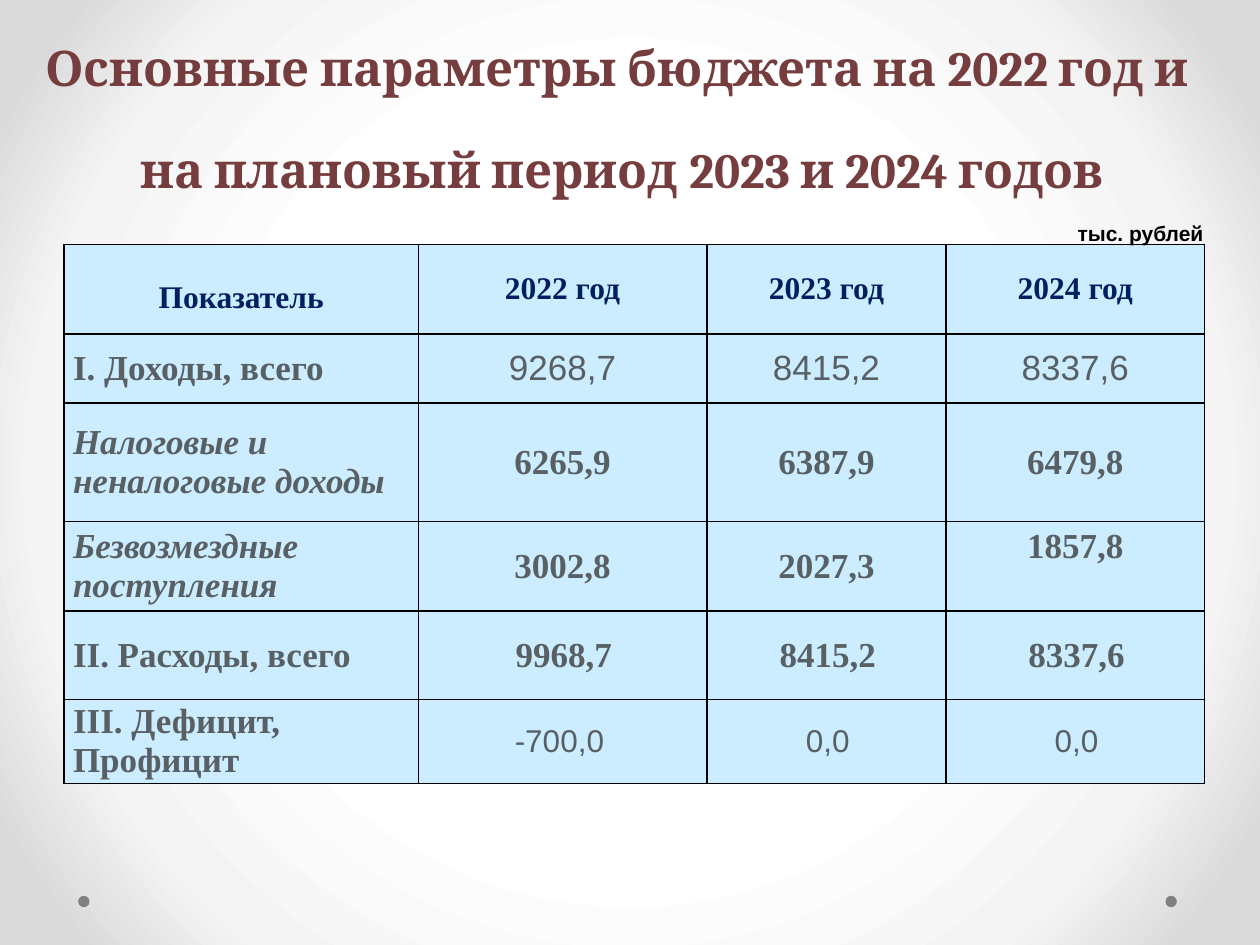
import pptx
import pptx.util
import pptx.dml.color
import pptx.enum.shapes
import pptx.enum.text
import pptx.oxml
import pptx.oxml.ns

Inches = pptx.util.Inches
Pt = pptx.util.Pt
ALIGN = pptx.enum.text.PP_ALIGN
ANCHOR = pptx.enum.text.MSO_ANCHOR

COLORS = {
    "title": "753D3D", "heading": "002060", "body": "586064", "unit": "000000",
    "cell": "CCECFF", "border": "000000", "dot": "808080",
}
BACKDROP = {50: "FFFFFF", 76: "F4F4F4", 92: "DADADA"}
SERIF, SANS = "Times New Roman", "Arial"

COLUMN_WIDTHS = [2.81, 2.29, 1.9, 2.05]
ROW_HEIGHTS = [0.71, 0.55, 0.94, 0.71, 0.7, 0.65]
HEADINGS = ["Показатель", "2022 год", "2023 год", "2024 год"]
# Label lines, label italic, values, value font, value size, first-line indent
BUDGET = [
    (["I. Доходы, всего"], False, ["9268,7", "8415,2", "8337,6"], SANS, 20, -0.07),
    (["Налоговые и неналоговые доходы"], True, ["6265,9", "6387,9", "6479,8"], SERIF, 20, -0.07),
    (["Безвозмездные поступления"], True, ["3002,8", "2027,3", "1857,8"], SERIF, 20, -0.07),
    (["II. Расходы, всего"], False, ["9968,7", "8415,2", "8337,6"], SERIF, 20, 0.02),
    (["III. Дефицит,", "Профицит"], False, ["-700,0 ", "0,0", "0,0"], SANS, 18, 0.02),
]


def rgb(name):
    return pptx.dml.color.RGBColor.from_string(COLORS[name])


def add_run(paragraph, text, font, size, color, bold=True, italic=False):
    run = paragraph.add_run()
    run.text = text
    run.font.name = font
    run.font.size = Pt(size)
    run.font.color.rgb = rgb(color)
    run.font.bold = bold
    run.font.italic = italic


def set_indent(paragraph, inches):
    properties = paragraph._p.get_or_add_pPr()
    properties.set("marL", "0")
    properties.set("indent", str(Inches(inches)))


def set_background(slide):
    stops = "".join(f'<a:gs pos="{position * 1000}"><a:srgbClr val="{color}"/></a:gs>'
                    for position, color in BACKDROP.items())
    slide._element.cSld.insert(0, pptx.oxml.parse_xml(
        f'<p:bg {pptx.oxml.ns.nsdecls("p", "a")}><p:bgPr><a:gradFill rotWithShape="1">'
        f'<a:gsLst>{stops}</a:gsLst><a:path path="circle">'
        '<a:fillToRect l="50000" t="50000" r="50000" b="50000"/></a:path>'
        '</a:gradFill><a:effectLst/></p:bgPr></p:bg>'))


def add_dot(slide, left):
    dot = slide.shapes.add_shape(pptx.enum.shapes.MSO_SHAPE.OVAL,
                                 Inches(left), Inches(7.11), Inches(0.09), Inches(0.09))
    dot.shadow.inherit = False
    dot.fill.solid()
    dot.fill.fore_color.rgb = rgb("dot")
    dot.line.fill.background()


def add_text_box(slide, left, top, width, height, align, anchor=ANCHOR.TOP):
    frame = slide.shapes.add_textbox(
        Inches(left), Inches(top), Inches(width), Inches(height)).text_frame
    frame.word_wrap = True
    frame.vertical_anchor = anchor
    paragraph = frame.paragraphs[0]
    paragraph.alignment = align
    return paragraph


def add_title(slide):
    title = add_text_box(slide, 0, 0.39, 9.88, 1.23, ALIGN.CENTER, ANCHOR.BOTTOM)
    title.line_spacing = Pt(58)
    add_run(title, "Основные параметры бюджета на 2022 год и ", "Cambria", 28, "title")
    title.add_line_break()
    add_run(title, "на плановый период 2023 и 2024 годов", "Cambria", 28, "title")


def style_cell(cell):
    cell.margin_left = cell.margin_right = Inches(0.07)
    cell.margin_top = cell.margin_bottom = 0
    cell.vertical_anchor = ANCHOR.MIDDLE
    properties = cell._tc.get_or_add_tcPr()
    for side in ("lnL", "lnR", "lnT", "lnB"):
        properties.append(pptx.oxml.parse_xml(
            f'<a:{side} {pptx.oxml.ns.nsdecls("a")} w="{Pt(1)}"><a:solidFill>'
            f'<a:srgbClr val="{COLORS["border"]}"/></a:solidFill></a:{side}>'))
    cell.fill.solid()
    cell.fill.fore_color.rgb = rgb("cell")


def add_budget_table(slide):
    budget = slide.shapes.add_table(
        len(ROW_HEIGHTS), len(COLUMN_WIDTHS), Inches(0.51), Inches(1.94),
        Inches(sum(COLUMN_WIDTHS)), Inches(sum(ROW_HEIGHTS))).table
    for column, width in zip(budget.columns, COLUMN_WIDTHS):
        column.width = Inches(width)
    for row, height in zip(budget.rows, ROW_HEIGHTS):
        row.height = Inches(height)
    for cell in budget.iter_cells():
        style_cell(cell)

    # Heading row
    for column, heading in enumerate(HEADINGS):
        paragraph = budget.cell(0, column).text_frame.paragraphs[0]
        paragraph.alignment = ALIGN.CENTER
        add_run(paragraph, heading, SERIF, 18, "heading")
    indicator = budget.cell(0, 0).text_frame.paragraphs[0]
    indicator.line_spacing = 1.5
    set_indent(indicator, -0.07)

    # Budget rows
    for row, (label, italic, values, font, size, indent) in enumerate(BUDGET, start=1):
        frame = budget.cell(row, 0).text_frame
        for number, line in enumerate(label):
            paragraph = frame.add_paragraph() if number else frame.paragraphs[0]
            add_run(paragraph, line, SERIF, 20, "body", italic=italic)
        for column, value in enumerate(values, start=1):
            paragraph = budget.cell(row, column).text_frame.paragraphs[0]
            paragraph.alignment = ALIGN.CENTER
            set_indent(paragraph, indent)
            add_run(paragraph, value, font, size, "body", bold=font == SERIF)

    # The 2024 transfers figure sits one half line higher
    budget.cell(3, 3).margin_bottom = Inches(0.31)


def main():
    deck = pptx.Presentation()
    deck.slide_width, deck.slide_height = Inches(10), Inches(7.5)
    slide = deck.slides.add_slide(deck.slide_layouts[6])

    # Backdrop
    set_background(slide)
    for left in (9.25, 0.62):
        add_dot(slide, left)

    # Content
    add_title(slide)
    add_budget_table(slide)
    unit = add_text_box(slide, 8.23, 1.7, 1.42, 0.3, ALIGN.RIGHT)
    add_run(unit, "тыс. рублей", SANS, 12, "unit")

    deck.save("out.pptx")


if __name__ == "__main__":
    main()
